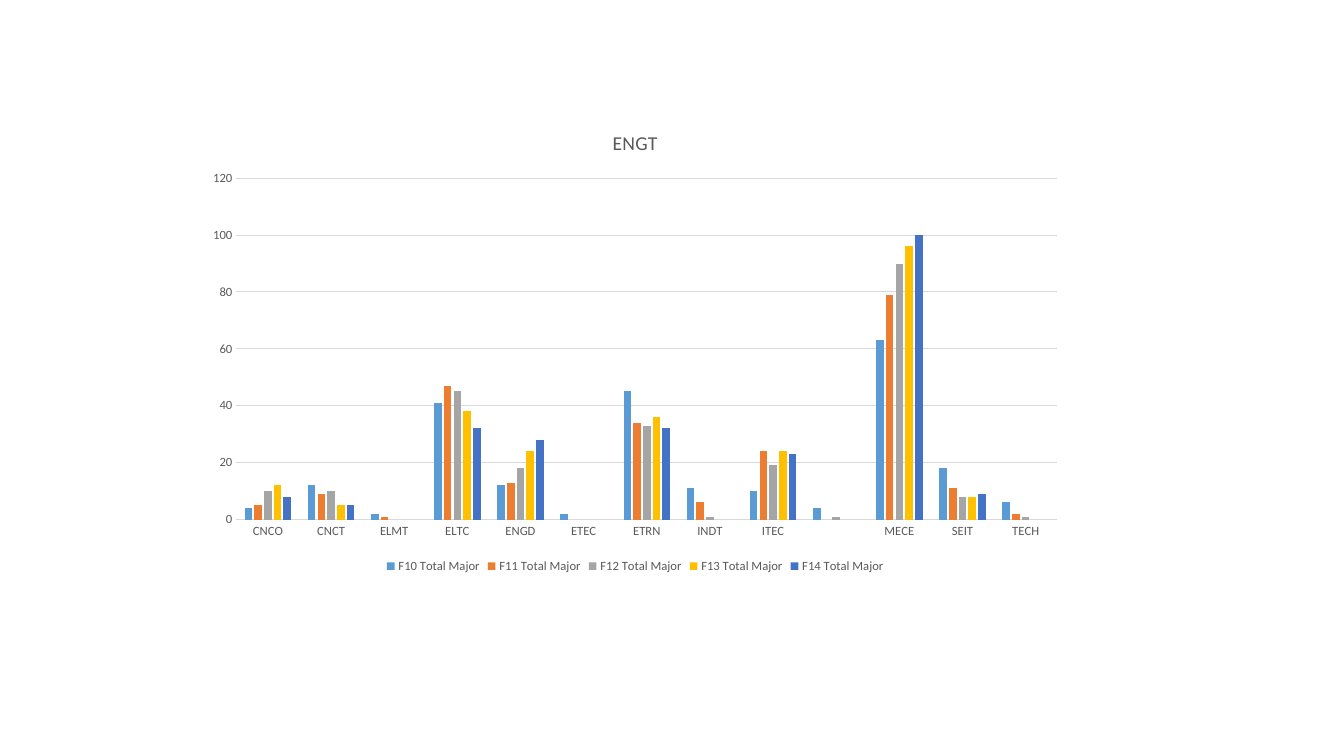
from dataclasses import dataclass

from pptx import Presentation
from pptx.chart.data import CategoryChartData
from pptx.dml.color import RGBColor
from pptx.enum.chart import XL_CHART_TYPE, XL_LEGEND_POSITION, XL_TICK_MARK
from pptx.util import Inches, Pt


@dataclass(frozen=True)
class Theme:
    font: str = "Calibri"
    text: str = "595959"
    line: str = "D9D9D9"
    series: tuple = ("5B9BD5", "ED7D31", "A5A5A5", "FFC000", "4472C4")
    title_size: int = 14
    label_size: int = 9
    line_width: float = 0.75


theme = Theme()


def style_font(font, size):
    font.name = theme.font
    font.size = Pt(size)
    font.bold = False
    font.color.rgb = RGBColor.from_string(theme.text)


def style_line(line):
    line.color.rgb = RGBColor.from_string(theme.line)
    line.width = Pt(theme.line_width)


presentation = Presentation()
presentation.slide_width = Inches(13.33)
presentation.slide_height = Inches(7.5)
slide = presentation.slides.add_slide(presentation.slide_layouts[6])

# Majors per programme, one series per fall term
majors = {
    "F10": (4, 12, 2, 41, 12, 2, 45, 11, 10, 4, 63, 18, 6),
    "F11": (5, 9, 1, 47, 13, None, 34, 6, 24, None, 79, 11, 2),
    "F12": (10, 10, None, 45, 18, None, 33, 1, 19, 1, 90, 8, 1),
    "F13": (12, 5, None, 38, 24, None, 36, None, 24, None, 96, 8, None),
    "F14": (8, 5, None, 32, 28, None, 32, None, 23, None, 100, 9, None),
}
chart_data = CategoryChartData(number_format="#,##0")
chart_data.categories = [
    "CNCO", "CNCT", "ELMT", "ELTC", "ENGD", "ETEC", "ETRN",
    "INDT", "ITEC", "", "MECE", "SEIT", "TECH",
]
for term, values in majors.items():
    chart_data.add_series(f"{term} Total Major", values)

chart = slide.shapes.add_chart(
    XL_CHART_TYPE.COLUMN_CLUSTERED,
    Inches(1.94), Inches(1.1), Inches(8.72), Inches(4.63), chart_data,
).chart
style_font(chart.font, theme.label_size)

# Title
chart.has_title = True
chart.chart_title.include_in_layout = False
title = chart.chart_title.text_frame.paragraphs[0]
title.text = "ENGT"
style_font(title.font, theme.title_size)

# Legend
chart.has_legend = True
chart.legend.position = XL_LEGEND_POSITION.BOTTOM
chart.legend.include_in_layout = False
style_font(chart.legend.font, theme.label_size)

# Axes
for axis in (chart.category_axis, chart.value_axis):
    axis.major_tick_mark = XL_TICK_MARK.NONE
    axis.minor_tick_mark = XL_TICK_MARK.NONE
    style_font(axis.tick_labels.font, theme.label_size)
style_line(chart.category_axis.format.line)

value_axis = chart.value_axis
value_axis.minimum_scale = 0
value_axis.maximum_scale = 120
value_axis.major_unit = 20
value_axis.tick_labels.number_format = "#,##0"
value_axis.tick_labels.number_format_is_linked = False
value_axis.format.line.fill.background()
value_axis.has_major_gridlines = True
style_line(value_axis.major_gridlines.format.line)

# Columns
plot = chart.plots[0]
plot.vary_by_categories = False
plot.gap_width = 219
plot.overlap = -27
for series, color in zip(plot.series, theme.series):
    series.format.fill.solid()
    series.format.fill.fore_color.rgb = RGBColor.from_string(color)

presentation.save("out.pptx")
